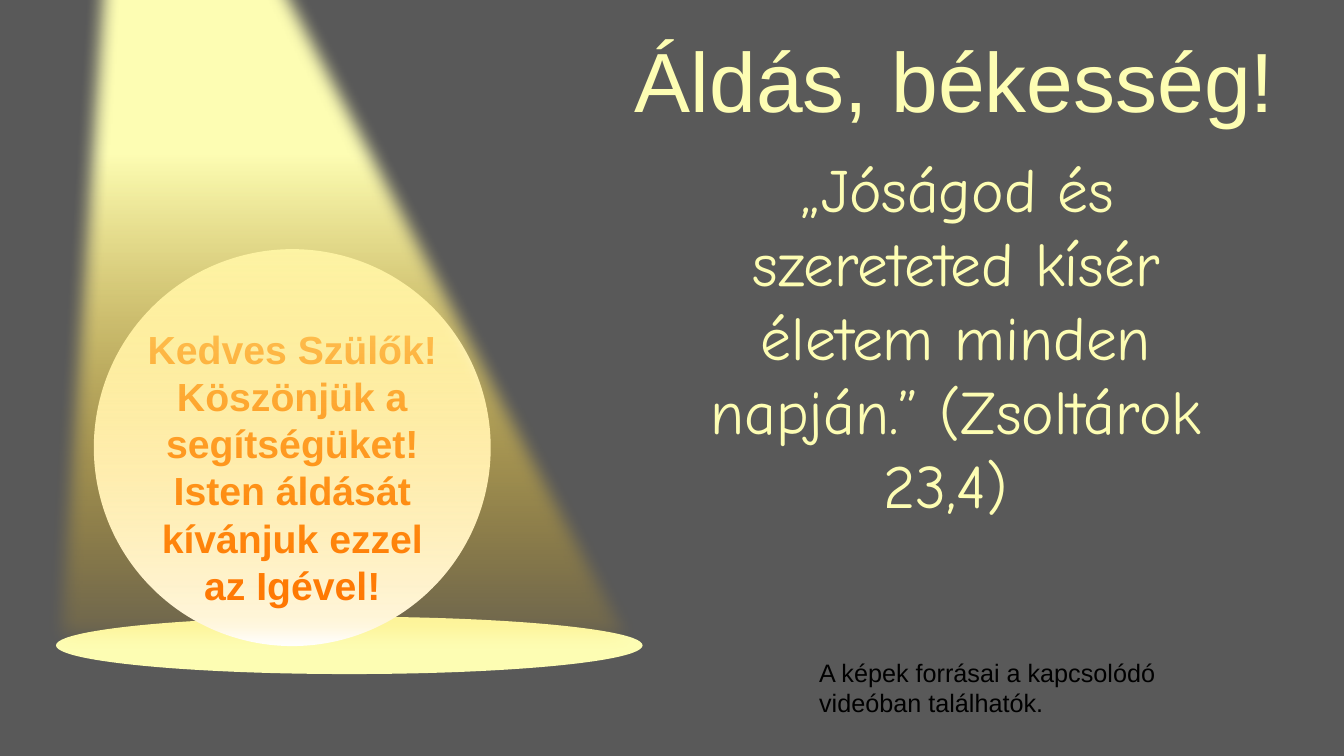
import pptx
import pptx.util
import pptx.dml.color
import pptx.enum.shapes
import pptx.enum.text
import pptx.oxml
import pptx.oxml.ns
from dataclasses import dataclass

Pt = pptx.util.Pt
SHAPE = pptx.enum.shapes.MSO_SHAPE
ALIGN = pptx.enum.text.PP_ALIGN


@dataclass(frozen=True)
class Theme:
    backdrop: str = "595959"
    light: str = "FDFDB3"
    glow: str = "FFC000"
    disc: str = "FFFFFF"
    thanks: str = "FF6600"
    credit: str = "000000"
    sans: str = "Arial"
    hand: str = "Comic Neue"
    title_size: int = 60
    verse_size: int = 44
    thanks_size: int = 28
    credit_size: int = 18


THEME = Theme()


def rgb(value):
    return pptx.dml.color.RGBColor.from_string(value)


def apply_format(target, values):
    for name, value in values.items():
        setattr(target, name, value)


def add_plain(shapes, kind, box, color):
    figure = shapes.add_shape(kind, *map(Pt, box))
    figure.shadow.inherit = False
    figure.fill.solid()
    figure.fill.fore_color.rgb = rgb(color)
    figure.line.fill.background()
    return figure


def add_words(shapes, box, lines, font, color, align=ALIGN.CENTER, before=0, wrap=True):
    words = shapes.add_textbox(*map(Pt, box))
    frame = words.text_frame
    apply_format(frame, {
        "word_wrap": wrap,
        "auto_size": pptx.enum.text.MSO_AUTO_SIZE.SHAPE_TO_FIT_TEXT,
        "text": "\n".join(lines),
    })
    for paragraph in frame.paragraphs:
        apply_format(paragraph, {"alignment": align, "space_before": Pt(before)})
        for run in paragraph.runs:
            apply_format(run.font, font)
            run.font.color.rgb = rgb(color)


def add_thanks(slide, box):
    left, top, width, height = box
    thanks = slide.shapes.add_group_shape()
    add_plain(thanks.shapes, SHAPE.OVAL, box, THEME.disc)
    add_words(
        thanks.shapes,
        (left + 30.5, top + 51, width - 61, height - 73),
        ["Kedves Szülők!", "Köszönjük a segítségüket!",
         "Isten áldását kívánjuk ezzel az Igével!"],
        {"name": THEME.sans, "size": Pt(THEME.thanks_size), "bold": True},
        THEME.thanks,
    )


def add_beam(slide, box):
    beam = add_plain(slide.shapes, SHAPE.ISOSCELES_TRIANGLE, box, THEME.light)
    beam.adjustments[0] = 0.11
    properties = beam.element.spPr
    gradient = pptx.oxml.parse_xml(
        f'<a:gradFill {pptx.oxml.ns.nsdecls("a")} rotWithShape="1"><a:gsLst>'
        f'<a:gs pos="0"><a:srgbClr val="{THEME.glow}"><a:alpha val="9000"/></a:srgbClr></a:gs>'
        f'<a:gs pos="48000"><a:srgbClr val="{THEME.light}"/></a:gs>'
        f'<a:gs pos="100000"><a:srgbClr val="{THEME.light}"/></a:gs>'
        '</a:gsLst><a:lin ang="16200000" scaled="0"/></a:gradFill>'
    )
    properties.replace(properties.find(pptx.oxml.ns.qn("a:solidFill")), gradient)
    soft_edge = pptx.oxml.parse_xml(
        f'<a:softEdge {pptx.oxml.ns.nsdecls("a")} rad="{Pt(12.5)}"/>'
    )
    properties.find(pptx.oxml.ns.qn("a:effectLst")).append(soft_edge)


def add_spotlight(slide, box):
    left, top, width, height = box
    add_plain(slide.shapes, SHAPE.OVAL, (left + 9, top + 713.5, width - 21, 41), THEME.light)
    add_thanks(slide, (left + 36, top + 451, 283.5, 283.5))
    add_beam(slide, box)


def add_blessing(slide, box):
    left, top, width, height = box
    add_words(
        slide.shapes, (left + 38, top + 88, 402, 273.5),
        ["„Jóságod és szereteted kísér életem minden napján.” (Zsoltárok 23,4) "],
        {"name": THEME.hand, "size": Pt(THEME.verse_size)}, THEME.light, before=10,
    )
    add_words(
        slide.shapes, (left, top, width, 80), ["Áldás, békesség! "],
        {"name": THEME.sans, "size": Pt(THEME.title_size)}, THEME.light, wrap=False,
    )
    add_words(
        slide.shapes, (left + 134, top + height - 51, 299.5, 51),
        ["A képek forrásai a kapcsolódó videóban találhatók."],
        {"name": THEME.sans, "size": Pt(THEME.credit_size)}, THEME.credit, align=ALIGN.LEFT,
    )


def main():
    deck = pptx.Presentation()
    apply_format(deck, {"slide_width": Pt(960), "slide_height": Pt(540)})
    slide = deck.slides.add_slide(deck.slide_layouts[6])
    slide.background.fill.solid()
    slide.background.fill.fore_color.rgb = rgb(THEME.backdrop)
    add_spotlight(slide, (31, -273, 440, 739.5))
    add_blessing(slide, (444, 16.5, 492.5, 500.5))
    deck.save("out.pptx")


if __name__ == "__main__":
    main()
